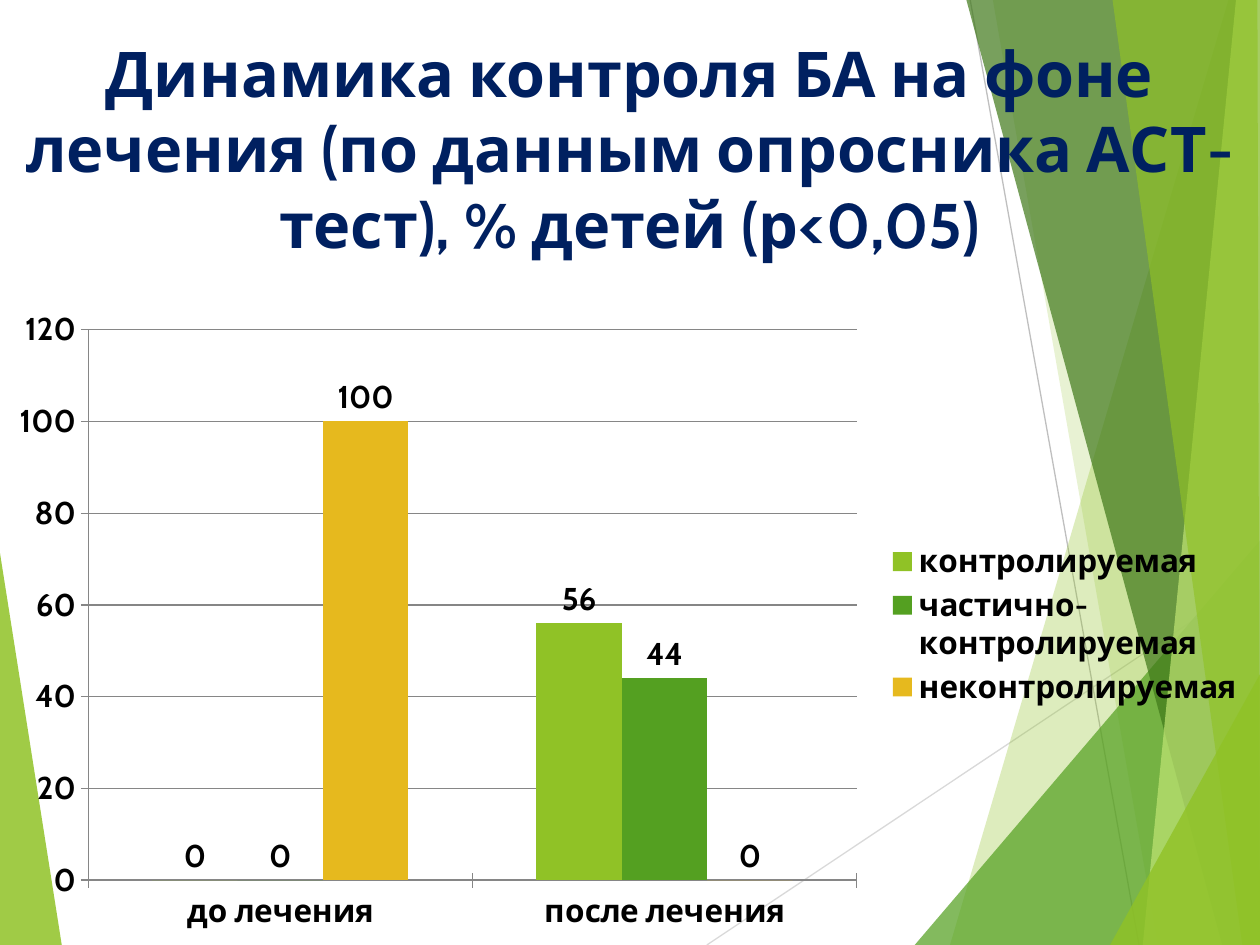
from lxml import etree
from pptx import Presentation
from pptx.chart.data import CategoryChartData
from pptx.dml.color import RGBColor
from pptx.enum.chart import XL_CHART_TYPE, XL_LABEL_POSITION, XL_LEGEND_POSITION, XL_TICK_MARK
from pptx.enum.shapes import MSO_CONNECTOR
from pptx.enum.text import MSO_ANCHOR, PP_ALIGN
from pptx.oxml import parse_xml
from pptx.oxml.ns import nsdecls, qn
from pptx.util import Pt

COLUMNS = XL_CHART_TYPE.COLUMN_CLUSTERED
OUTSIDE = XL_LABEL_POSITION.OUTSIDE_END
RIGHT = XL_LEGEND_POSITION.RIGHT
CROSS = XL_TICK_MARK.CROSS
STRAIGHT = MSO_CONNECTOR.STRAIGHT
MIDDLE = MSO_ANCHOR.MIDDLE
CENTER = PP_ALIGN.CENTER

PX = 9144  # 100 px to the inch
W, H = 1000, 750
FONT = "Cabin"
LIME, GREEN, YELLOW = "90C226", "54A021", "E6B91E"


def rgb(color):
    return RGBColor.from_string(color)


def manual_layout(x, y, w, h, inner=False):
    target = '<c:layoutTarget val="inner"/>' if inner else ""
    return parse_xml(
        f'<c:layout {nsdecls("c")}><c:manualLayout>{target}'
        '<c:xMode val="edge"/><c:yMode val="edge"/>'
        f'<c:x val="{x}"/><c:y val="{y}"/><c:w val="{w}"/><c:h val="{h}"/>'
        '</c:manualLayout></c:layout>')


prs = Presentation()
prs.slide_width, prs.slide_height = W * PX, H * PX
s = prs.slides.add_slide(prs.slide_layouts[6])

# Thin lines behind the facets
for x1, y1, x2, y2, color in [(561, H, W, 457, "D9D9D9"), (770, 0, 904, H, "BFBFBF")]:
    line = s.shapes.add_connector(STRAIGHT, x1 * PX, y1 * PX, x2 * PX, y2 * PX)
    line.line.color.rgb = rgb(color)
    line.line.width = Pt(0.75)
    etree.SubElement(line._element.spPr, qn("a:effectLst"))

# Translucent facets: colour, opacity in percent, corners
facets = [
    (LIME, 85, [(0, 439), (49, H), (0, H)]),
    (LIME, 30, [(975, 0), (754, H), (W, H), (W, 0)]),
    (LIME, 20, [(788, 0), (919, H), (W, H), (W, 0)]),
    (GREEN, 72, [(726, H), (W, 429), (W, H)]),
    ("3F7819", 70, [(767, 0), (970, H), (W, H), (W, 0)]),
    ("C0E474", 70, [(981, 0), (907, H), (W, H), (W, 0)]),
    (LIME, 65, [(883, 0), (986, H), (W, H), (998, 0)]),
    (LIME, 80, [(881, H), (W, 535), (W, H)]),
]
for color, opacity, corners in facets:
    builder = s.shapes.build_freeform(*corners[0], scale=PX)
    builder.add_line_segments(corners[1:], close=True)
    sp = builder.convert_to_shape()
    sp.shadow.inherit = False
    sp.line.fill.background()
    sp.fill.solid()
    sp.fill.fore_color.rgb = rgb(color)
    clr = sp._element.spPr.find(qn("a:solidFill"))[0]
    etree.SubElement(clr, qn("a:alpha"), val=str(opacity * 1000))

# Title
tf = s.shapes.add_textbox(0, 23 * PX, W * PX, 188 * PX).text_frame
tf.word_wrap = True
tf.vertical_anchor = MIDDLE
p = tf.paragraphs[0]
p.alignment = CENTER
r = p.add_run()
r.text = "Динамика контроля БА на фоне лечения (по данным опросника АСТ-тест), % детей (р<0,05)"
r.font.name, r.font.size, r.font.bold = FONT, Pt(36), True
r.font.color.rgb = rgb("002060")

# Chart
data = CategoryChartData()
data.categories = ["до лечения", "после лечения"]
data.add_series("контролируемая", [0, 56])
data.add_series("частично-контролируемая", [0, 44])
data.add_series("неконтролируемая", [100, 0])
chart = s.shapes.add_chart(COLUMNS, 0, 236 * PX, W * PX, 514 * PX, data).chart
chart.has_title = False
chart.font.name, chart.font.size, chart.font.bold = FONT, Pt(18), True
chart.font.color.rgb = rgb("000000")

# Columns and their labels
plot = chart.plots[0]
plot.vary_by_categories = False
plot.gap_width, plot.overlap = 150, 0
for series, color in zip(plot.series, [LIME, GREEN, YELLOW]):
    series.format.fill.solid()
    series.format.fill.fore_color.rgb = rgb(color)
    labels = series.data_labels
    labels.show_value = True
    labels.position = OUTSIDE
    labels.font.name, labels.font.size, labels.font.bold = FONT, Pt(18), True
    labels.font.color.rgb = rgb("000000")

# Axes
values = chart.value_axis
values.minimum_scale, values.maximum_scale, values.major_unit = 0, 120, 20
values.has_major_gridlines = True
for axis in (chart.category_axis, values):
    axis.major_tick_mark = CROSS
    axis.tick_labels.font.bold = True
for part in (chart.category_axis, values, values.major_gridlines):
    part.format.line.color.rgb = rgb("868686")
    part.format.line.width = Pt(0.75)

# Legend and placing
chart.has_legend = True
legend = chart.legend
legend.position = RIGHT
legend.include_in_layout = False
legend.font.name, legend.font.size, legend.font.bold = FONT, Pt(18), True
legend.font.color.rgb = rgb("000000")
for old in legend._element.findall(qn("c:layout")):
    legend._element.remove(old)
legend._element.find(qn("c:legendPos")).addnext(manual_layout(0.7, 0.37, 0.29, 0.27))
area = chart._chartSpace.chart.plotArea
for old in area.findall(qn("c:layout")):
    area.remove(old)
area.insert(0, manual_layout(0.07, 0.05, 0.61, 0.85, inner=True))

prs.save("out.pptx")
